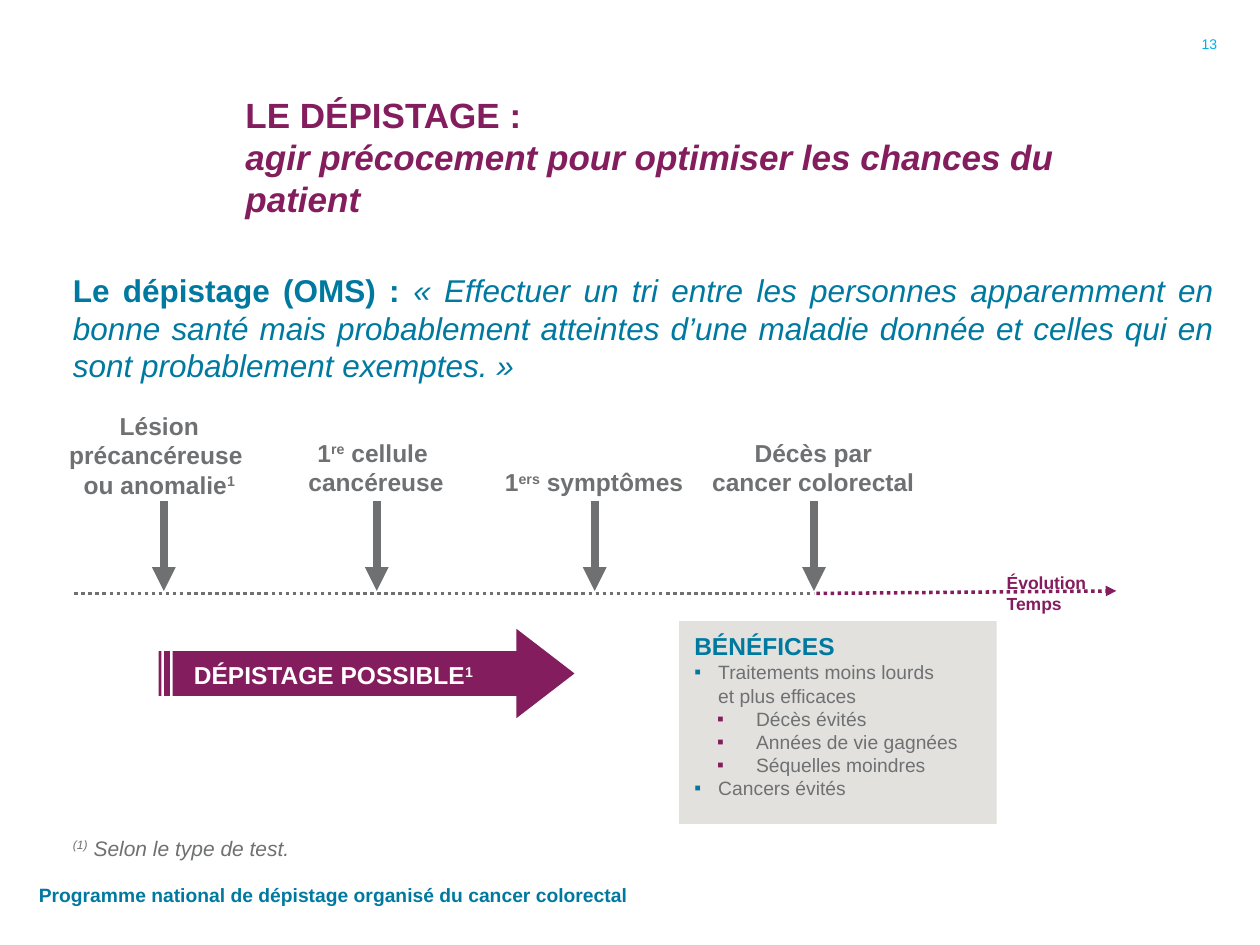
from copy import deepcopy

from lxml.etree import SubElement
from pptx import Presentation
from pptx.dml.color import RGBColor
from pptx.enum.dml import MSO_LINE_DASH_STYLE as Dash
from pptx.enum.shapes import MSO_CONNECTOR_TYPE as Connector, MSO_SHAPE as Shape
from pptx.enum.text import MSO_ANCHOR as Anchor, MSO_AUTO_SIZE as AutoSize, PP_ALIGN as Align
from pptx.oxml.ns import qn
from pptx.util import Inches, Pt

# The grid has 100 columns and 75 rows
COLUMNS, ROWS = 100, 75
PLUM, BLUE, CYAN, GREY, PALE, WHITE = "841D5D", "0079A0", "00AEEF", "6E7072", "E2E1DD", "FFFFFF"


def color(hex_string):
    return RGBColor.from_string(hex_string)


def set_all(target, values):
    for name, value in values.items():
        setattr(target, name, value)


class SlideBuilder:
    font_name = "Arial"

    def __init__(self, presentation):
        self.column = presentation.slide_width / COLUMNS
        self.row = presentation.slide_height / ROWS
        self.slide = presentation.slides.add_slide(presentation.slide_layouts[6])

    def place(self, *lengths):
        """Turn alternating column and row counts into slide lengths."""
        return [round(length * unit) for length, unit in
                zip(lengths, (self.column, self.row) * 2)]

    def add_text_run(self, paragraph, text, style):
        """Add text; a line feed in it becomes a line break of the same size."""
        for index, part in enumerate(text.split("\n")):
            if index:
                paragraph.add_line_break()
                line_break = paragraph._p.findall(qn("a:br"))[-1]
                line_break.append(deepcopy(run._r.get_or_add_rPr()))
            run = paragraph.add_run()
            run.text = part
            run.font.color.rgb = color(style["color"])
            set_all(run.font, {"name": self.font_name, "size": Pt(style["size"]),
                               "bold": style.get("bold", False),
                               "italic": style.get("italic", False)})
            if style.get("raised"):
                run._r.get_or_add_rPr().set("baseline", "30000")

    def fill_text(self, shape, paragraphs, style, align=Align.LEFT, margins=None,
                  **frame_values):
        """Each paragraph is a list of (text, style changes) runs."""
        frame = shape.text_frame
        set_all(frame, {"word_wrap": True, "vertical_anchor": Anchor.TOP, **frame_values})
        if margins:
            sides = ("margin_left", "margin_top", "margin_right", "margin_bottom")
            set_all(frame, {side: Inches(value) for side, value in zip(sides, margins)})
        for index, runs in enumerate(paragraphs):
            paragraph = frame.add_paragraph() if index else frame.paragraphs[0]
            paragraph.alignment = align
            for text, changes in runs:
                self.add_text_run(paragraph, text, {**style, **changes})
        return frame

    def text(self, at, paragraphs, style, **values):
        box = self.slide.shapes.add_textbox(*self.place(*at))
        return self.fill_text(box, paragraphs, style, **values)

    def shape(self, kind, at, fill, adjustments=()):
        shape = self.slide.shapes.add_shape(kind, *self.place(*at))
        shape.shadow.inherit = False
        shape.fill.solid()
        shape.fill.fore_color.rgb = color(fill)
        shape.line.fill.background()
        for index, value in enumerate(adjustments):
            shape.adjustments[index] = value
        return shape

    def line(self, start, end, line_color, width, dash=None, arrow=False):
        connector = self.slide.shapes.add_connector(
            Connector.STRAIGHT, *self.place(*start, *end))
        connector.line.color.rgb = color(line_color)
        set_all(connector.line, {"width": Pt(width), "dash_style": dash})
        if arrow:
            SubElement(connector.line._get_or_add_ln(), qn("a:tailEnd"), type="triangle")
        SubElement(connector._element.spPr, qn("a:effectLst"))

    def indent(self, paragraph, left, hanging=0.0, bullet_color=None, level=0):
        paragraph.level = level
        properties = paragraph._p.get_or_add_pPr()
        properties.set("marL", str(Inches(left)))
        properties.set("indent", str(Inches(-hanging)))
        if bullet_color:
            bullet_fill = SubElement(properties, qn("a:buClr"))
            SubElement(bullet_fill, qn("a:srgbClr"), val=bullet_color)
            SubElement(properties, qn("a:buFont"), typeface=self.font_name)
            SubElement(properties, qn("a:buChar"), char="▪")


def main():
    presentation = Presentation()
    set_all(presentation, {"slide_width": Inches(10), "slide_height": Inches(7.5)})
    builder = SlideBuilder(presentation)
    raised = {"raised": True}
    label = {"size": 14, "color": GREY, "bold": True}

    # Title, definition, footer and page number
    builder.text((18.5, 2.9, 76, 15), [[
        ("LE DÉPISTAGE : \n", {}),
        ("agir précocement pour optimiser les chances du patient", {"italic": True})]],
        {"size": 20, "color": PLUM, "bold": True}, vertical_anchor=Anchor.BOTTOM)
    definition = builder.text((2.8, 21, 94.5, 46), [[
        ("Le dépistage (OMS) : ", {"bold": True}),
        ("« Effectuer un tri entre les personnes apparemment en bonne santé mais "
         "probablement atteintes d’une maladie donnée et celles qui en sont probablement "
         "exemptes. »", {"italic": True})]],
        {"size": 18, "color": BLUE}, align=Align.JUSTIFY)
    builder.indent(definition.paragraphs[0], 0.2)
    builder.text((2.1, 69, 49.5, 4),
                 [[("Programme national de dépistage organisé du cancer colorectal", {})]],
                 {"size": 11, "color": BLUE, "bold": True}, vertical_anchor=Anchor.MIDDLE)
    builder.text((93.3, 2.1, 4.3, 2.8), [[("13", {})]], {"size": 8, "color": CYAN},
                 align=Align.RIGHT, vertical_anchor=Anchor.MIDDLE)

    # Time axis
    builder.text((79.9, 45.4, 10.3, 3.4), [[("Évolution", {})], [("Temps", {})]],
                 {"size": 10, "color": PLUM, "bold": True}, margins=(0, 0, 0, 0))
    builder.line((5.9, 47.1), (64.6, 47.1), GREY, 2, Dash.ROUND_DOT)
    builder.line((64.8, 47.1), (88.6, 46.9), PLUM, 2, Dash.ROUND_DOT, arrow=True)

    # Milestones: arrow column, label place, wrapping, label text
    milestones = [
        (13, (2.8, 34.4, 19.7, 5.7), True,
         [[("Lésion précancéreuse \nou anomalie", {}), ("1", raised)]]),
        (29.9, (20, 34.2, 19.7, 5.7), True,
         [[("1", {}), ("re", raised), (" cellule \ncancéreuse", {})]]),
        (47.2, (38.9, 36.5, 16.5, 3.4), False,
         [[("1", {}), ("ers", raised), (" symptômes", {})]]),
        (64.6, (55.5, 34.2, 18.1, 5.7), False,
         [[("Décès par", {})], [("cancer colorectal", {})]]),
    ]
    for column, at, wrap, paragraphs in milestones:
        builder.line((column, 39.8), (column, 46.9), GREY, 4.5, arrow=True)
        builder.text(at, paragraphs, label, align=Align.CENTER, word_wrap=wrap,
                     vertical_anchor=Anchor.BOTTOM, auto_size=AutoSize.SHAPE_TO_FIT_TEXT)

    # Screening window
    builder.shape(Shape.STRIPED_RIGHT_ARROW, (12.6, 49.9, 33, 7.1), PLUM, (0.5, 0.65))
    builder.text((14.4, 51.9, 26.5, 3.3), [[("DÉPISTAGE POSSIBLE", {}), ("1", raised)]],
                 {**label, "color": WHITE})

    # Benefits panel: text and level of each item
    benefits = [("Traitements moins lourds \net plus efficaces", 0), ("Décès évités", 1),
                ("Années de vie gagnées", 1), ("Séquelles moindres", 1), ("Cancers évités", 0)]
    heading = [("BÉNÉFICES", {"size": 14, "color": BLUE, "bold": True})]
    panel = builder.shape(Shape.RECTANGLE, (53.9, 49.3, 25.2, 16.1), PALE)
    frame = builder.fill_text(panel, [heading] + [[(text, {})] for text, _ in benefits],
                              {"size": 11, "color": GREY}, margins=(0.12, 0.08, 0.12, 0.08))
    bullet_formats = [(0.19, 0.19, BLUE), (0.49, 0.31, PLUM)]
    for paragraph, (_, level) in zip(frame.paragraphs[1:], benefits):
        builder.indent(paragraph, *bullet_formats[level], level=level)

    # Footnote
    note = builder.text((2.8, 65.8, 94.5, 3.9),
                        [[("(1)", raised), (" Selon le type de test.", {})]],
                        {"size": 12, "color": GREY, "italic": True})
    builder.indent(note.paragraphs[0], 0.2, level=1)

    presentation.save("out.pptx")


if __name__ == "__main__":
    main()
